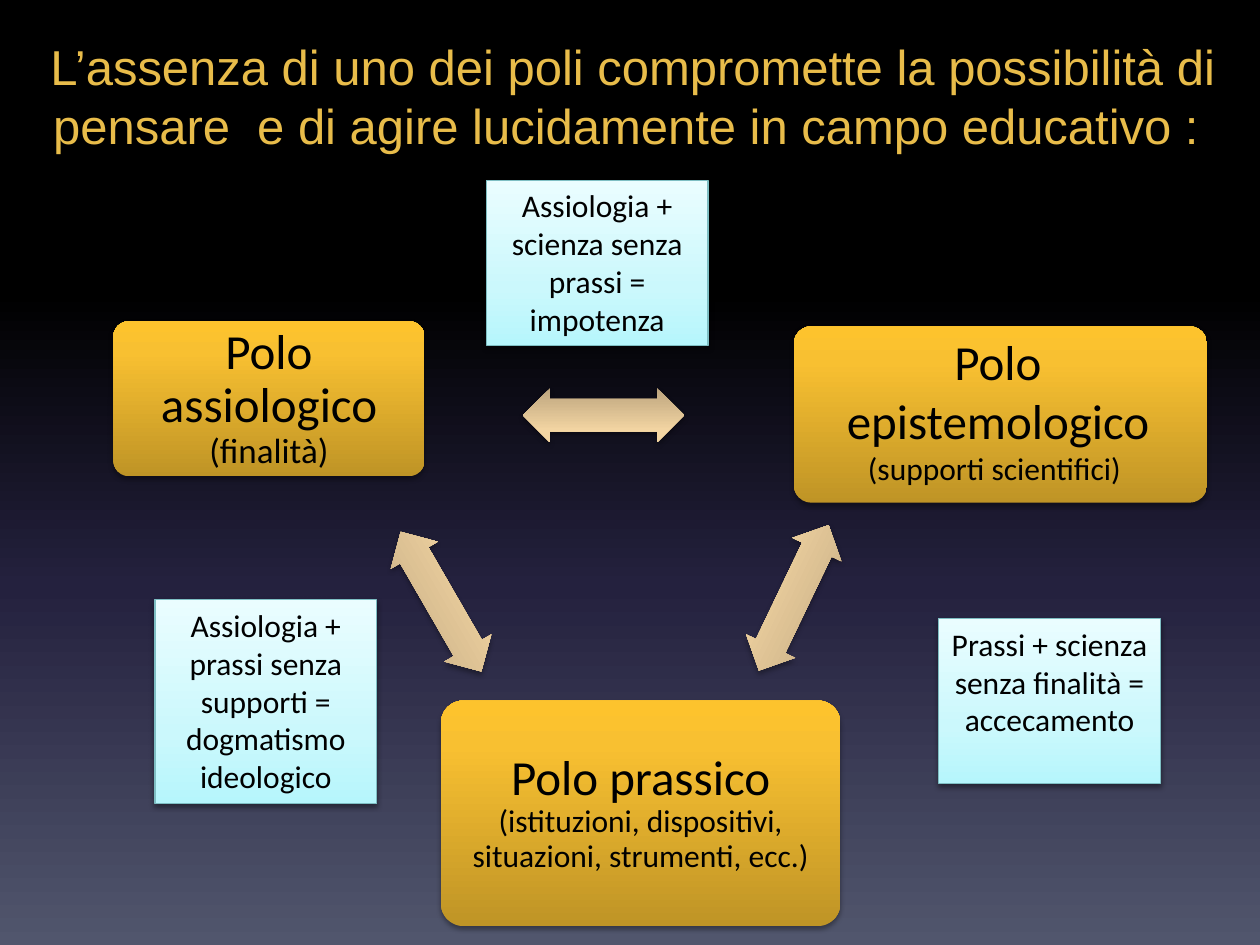
from dataclasses import dataclass

from lxml import etree
from pptx import Presentation
from pptx.dml.color import RGBColor
from pptx.enum import shapes, text
from pptx.oxml import ns
from pptx.util import Inches, Pt

Stops = tuple[tuple[int, str], ...]
Box = tuple[float, float, float, float]  # left, top, width, height


@dataclass(frozen=True)
class Theme:
    background: Stops = ((0, "000000"), (31, "000000"), (62, "24213E"), (100, "51566D"))
    pole: Stops = ((0, "BF9426"), (80, "F8C031"), (100, "FDC32D"))
    arrow: Stops = ((0, "BCA47E"), (80, "F4D6A3"), (100, "F6D7A2"))
    note: Stops = ((0, "B6F6FC"), (35, "CBF8FC"), (100, "EAFDFF"))
    note_line: str = "7EBEC3"
    title: str = "E8BC4A"
    ink: str = "000000"
    title_font: str = "Arial"
    body_font: str = "Calibri"
    large: int = 28
    small: int = 18


THEME = Theme()


@dataclass(frozen=True)
class Pole:
    box: Box
    name: str
    detail: str
    detail_size: int = THEME.small
    insets: Box = (0.07, 0.07, 0.07, 0.07)  # left, top, right, bottom
    anchor: text.MSO_ANCHOR = text.MSO_ANCHOR.MIDDLE
    line_spacing: float = 0.9


@dataclass(frozen=True)
class Arrow:
    left: float
    top: float
    rotation: float


@dataclass(frozen=True)
class Note:
    box: Box
    message: str


TITLE = ("L’assenza di uno dei poli compromette la possibilità di "
         "pensare  e di agire lucidamente in campo educativo : ")
POLES = (
    Pole((0.9, 2.55, 2.47, 1.23), "Polo assiologico ", "(finalità)", 20,
         (0.1, 0.1, 0.1, 0.1)),
    Pole((6.3, 2.59, 3.28, 1.4), "Polo epistemologico ", "(supporti scientifici) ",
         insets=(0.06, 0, 0.1, 0), anchor=text.MSO_ANCHOR.TOP, line_spacing=1.0),
    Pole((3.5, 5.56, 3.17, 1.79), "Polo prassico ",
         "(istituzioni, dispositivi, situazioni, strumenti, ecc.)"),
)
ARROWS = (Arrow(2.86, 4.56, 60), Arrow(4.15, 3.08, 180), Arrow(5.66, 4.53, 295.6))
ARROW_SIZE = (1.28, 0.43)
NOTES = (
    Note((1.23, 4.76, 1.76, 1.62),
         "Assiologia + prassi senza supporti = dogmatismo ideologico"),
    Note((3.86, 1.43, 1.76, 1.31), "Assiologia + scienza senza prassi = impotenza"),
    Note((7.45, 4.91, 1.76, 1.31), "Prassi + scienza senza finalità = accecamento"),
)


def set_gradient(fill, parent, stops: Stops, angle: int) -> None:
    """Give the fill any number of stops; parent is the XML element that holds it."""
    fill.solid()
    gradient = etree.Element(ns.qn("a:gradFill"), rotWithShape="1")
    stop_list = etree.SubElement(gradient, ns.qn("a:gsLst"))
    for position, color in stops:
        stop = etree.SubElement(stop_list, ns.qn("a:gs"), pos=str(position * 1000))
        etree.SubElement(stop, ns.qn("a:srgbClr"), val=color)
    etree.SubElement(gradient, ns.qn("a:lin"), ang=str(angle * 60000), scaled="0")
    parent.replace(parent.find(ns.qn("a:solidFill")), gradient)


def set_shadow(shape, opacity: int, distance: float) -> None:
    shape.shadow.inherit = False
    effects = shape._element.spPr.find(ns.qn("a:effectLst"))
    shadow = etree.SubElement(
        effects, ns.qn("a:outerShdw"), blurRad=str(Pt(3.1)), dist=str(Pt(distance)),
        dir="5400000", rotWithShape="0")
    color = etree.SubElement(shadow, ns.qn("a:srgbClr"), val="000000")
    etree.SubElement(color, ns.qn("a:alpha"), val=str(opacity * 1000))


def add_block(slide, kind: shapes.MSO_SHAPE, box: Box, stops: Stops,
              opacity: int = 35, distance: float = 1.8):
    """Add a borderless shape with a vertical gradient and a soft shadow."""
    shape = slide.shapes.add_shape(kind, *map(Inches, box))
    set_gradient(shape.fill, shape._element.spPr, stops, 270)
    shape.line.fill.background()
    set_shadow(shape, opacity, distance)
    return shape


def format_paragraph(paragraph, font: str, color: str, size: int) -> None:
    paragraph.alignment = text.PP_ALIGN.CENTER
    paragraph.font.name = font
    paragraph.font.color.rgb = RGBColor.from_string(color)
    paragraph.font.size = Pt(size)


def add_title(slide) -> None:
    title = slide.shapes.title
    title.left, title.top, title.width, title.height = map(Inches, (0.02, 0.24, 10, 1.51))
    frame = title.text_frame
    frame.text = TITLE
    frame.word_wrap = True
    frame.auto_size = text.MSO_AUTO_SIZE.NONE
    frame.vertical_anchor = text.MSO_ANCHOR.TOP
    format_paragraph(frame.paragraphs[0], THEME.title_font, THEME.title, THEME.large)


def add_pole(slide, pole: Pole) -> None:
    shape = add_block(slide, shapes.MSO_SHAPE.ROUNDED_RECTANGLE, pole.box, THEME.pole)
    shape.adjustments[0] = 0.1
    frame = shape.text_frame
    frame.word_wrap = True
    frame.vertical_anchor = pole.anchor
    (frame.margin_left, frame.margin_top,
     frame.margin_right, frame.margin_bottom) = map(Inches, pole.insets)
    paragraph = frame.paragraphs[0]
    format_paragraph(paragraph, THEME.body_font, THEME.ink, THEME.large)
    paragraph.line_spacing = pole.line_spacing
    paragraph.add_run().text = pole.name
    detail = paragraph.add_run()
    detail.text = pole.detail
    detail.font.size = Pt(pole.detail_size)


def add_arrow(slide, arrow: Arrow) -> None:
    shape = add_block(slide, shapes.MSO_SHAPE.LEFT_RIGHT_ARROW,
                      (arrow.left, arrow.top, *ARROW_SIZE), THEME.arrow)
    shape.adjustments[0] = 0.6
    shape.adjustments[1] = 0.5
    shape.rotation = arrow.rotation


def add_note(slide, note: Note) -> None:
    shape = add_block(slide, shapes.MSO_SHAPE.RECTANGLE, note.box, THEME.note, 38, 1.6)
    shape.line.color.rgb = RGBColor.from_string(THEME.note_line)
    shape.line.width = Pt(0.75)
    frame = shape.text_frame
    frame.text = note.message
    frame.word_wrap = True
    frame.vertical_anchor = text.MSO_ANCHOR.TOP
    format_paragraph(frame.paragraphs[0], THEME.body_font, THEME.ink, THEME.small)


def main() -> None:
    presentation = Presentation()
    presentation.slide_width, presentation.slide_height = Inches(10), Inches(7.5)
    slide = presentation.slides.add_slide(presentation.slide_layouts.get_by_name("Title Only"))
    background = slide.background.fill
    background.solid()
    set_gradient(background, slide._element.cSld.bg.bgPr, THEME.background, 90)
    add_title(slide)
    for pole in POLES:
        add_pole(slide, pole)
    for arrow in ARROWS:
        add_arrow(slide, arrow)
    for note in NOTES:
        add_note(slide, note)
    presentation.save("out.pptx")


if __name__ == "__main__":
    main()
